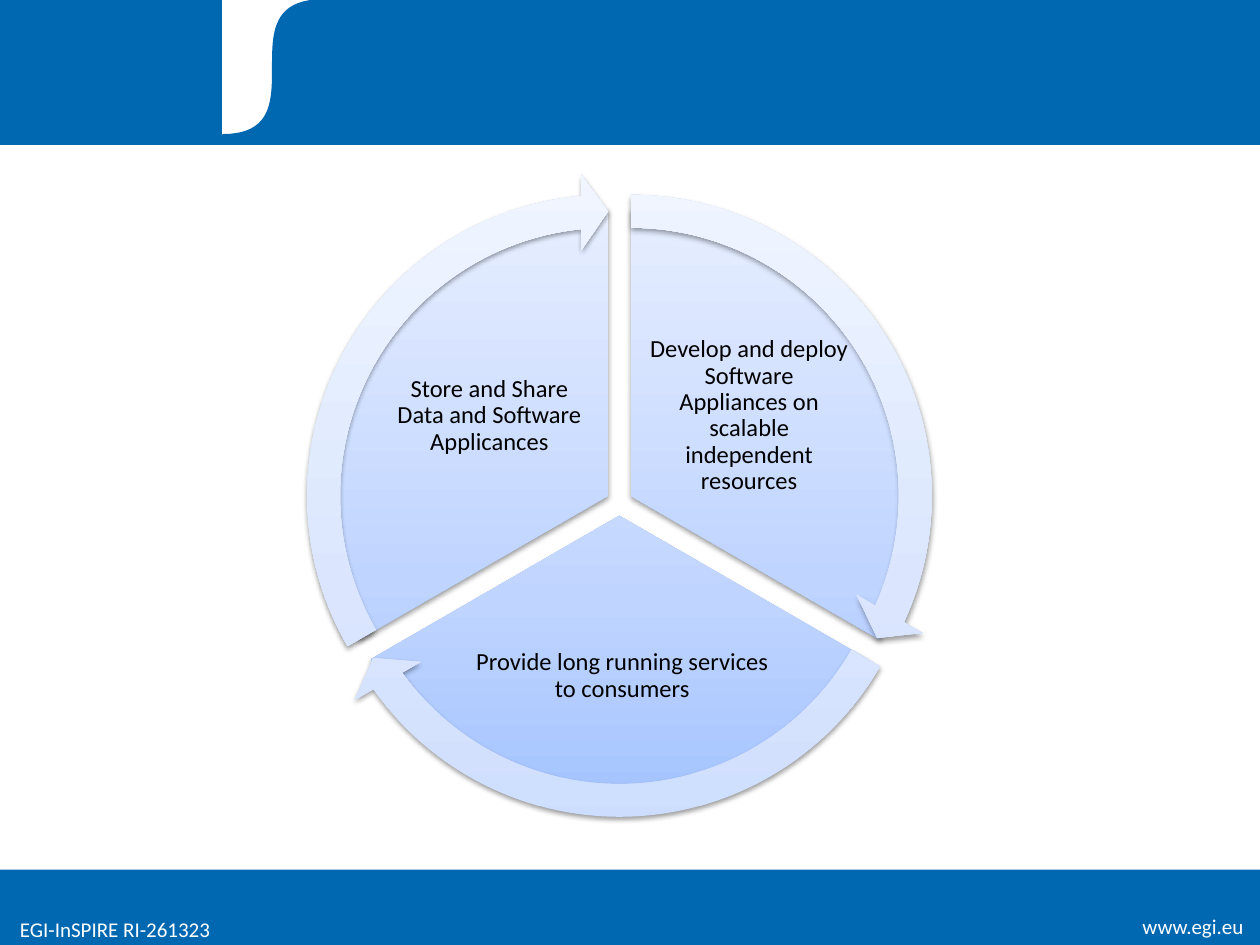
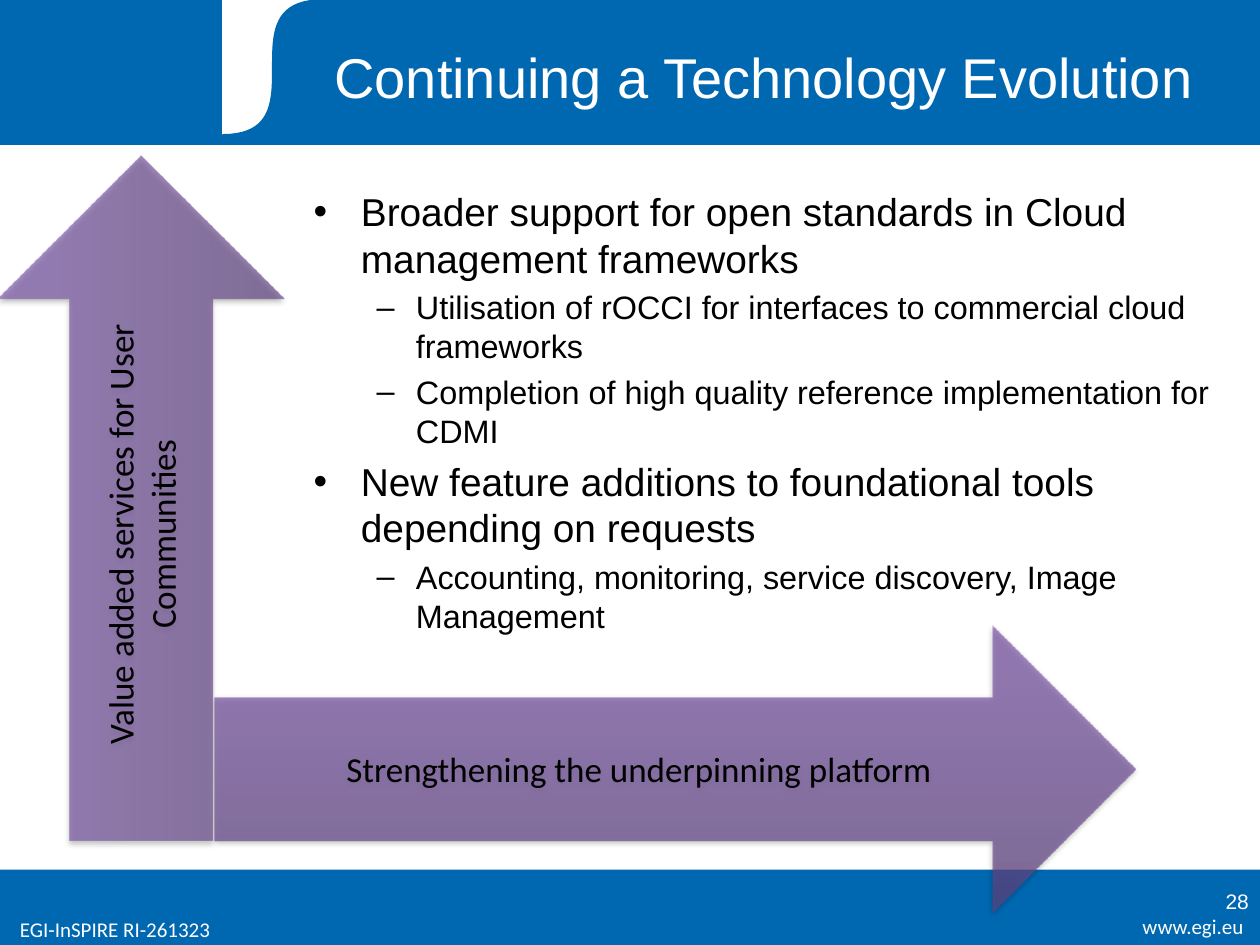
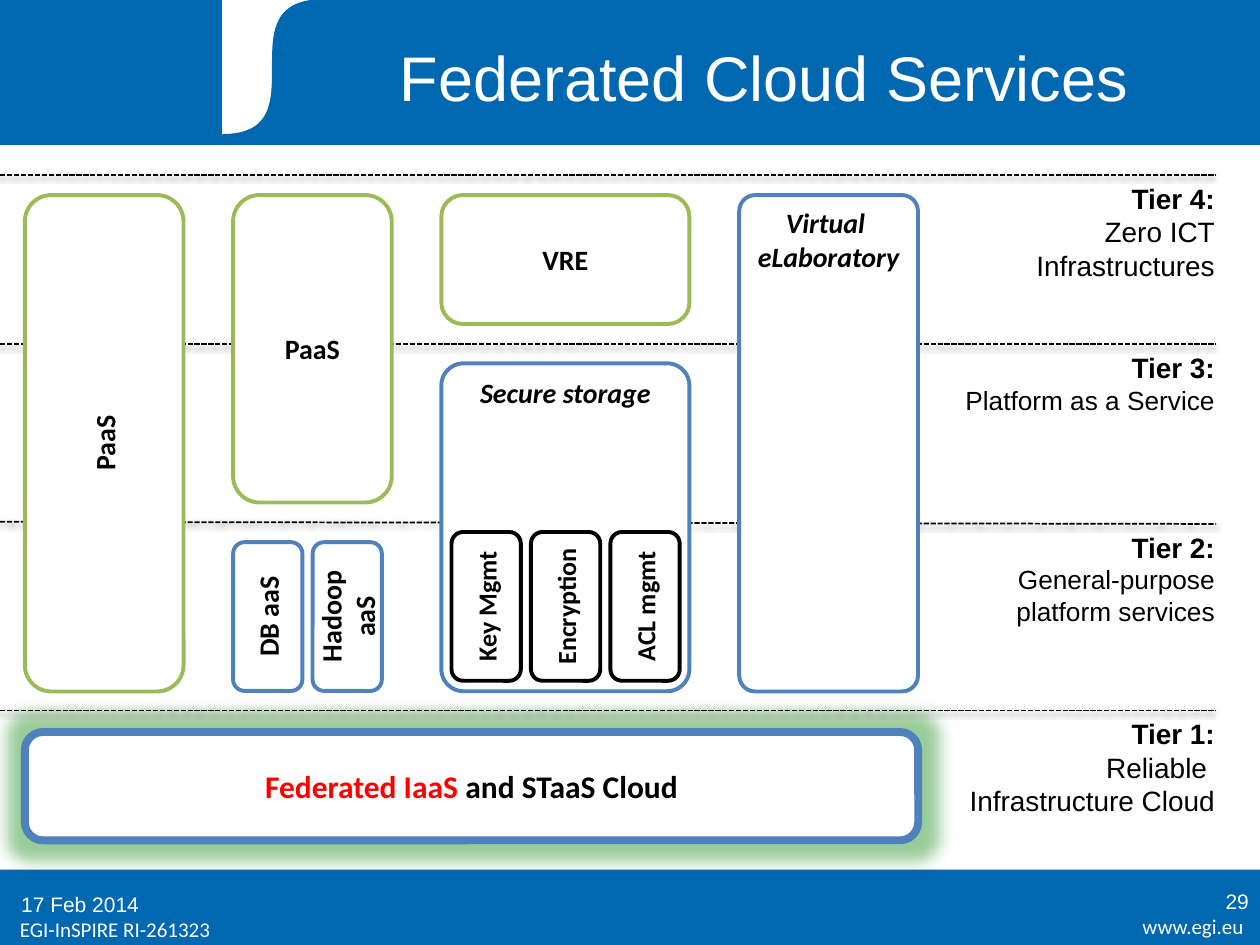
import pptx
import pptx.dml.color
import pptx.enum.dml
import pptx.enum.shapes
import pptx.enum.text
import pptx.oxml
import pptx.oxml.ns
import pptx.util

Pt = pptx.util.Pt
SHAPE = pptx.enum.shapes.MSO_SHAPE
ALIGN = pptx.enum.text.PP_ALIGN
ANCHOR = pptx.enum.text.MSO_ANCHOR
qn = pptx.oxml.ns.qn

# Shared look
BLUE, WHITE, BLACK = "0067B1", "FFFFFF", "000000"
GREEN_LINE, BLUE_LINE, RED, GLOW = "9BBB59", "4F81BD", "FF0000", "008000"
PIE_STOPS = [(0, "A4C4FF"), (35, "BFD4FF"), (100, "E6EEFF")]
RING_STOPS = [(0, "CDDDFE"), (35, "DBE6FE"), (100, "F0F5FF")]
PURPLE_STOPS = [(0, "5F4480"), (80, "7B58A6"), (100, "7C57A8")]


def rgb(value):
    return pptx.dml.color.RGBColor.from_string(value)


def parse(xml):
    return pptx.oxml.parse_xml(xml.replace(">", f" {pptx.oxml.ns.nsdecls('a')}>", 1))


def place(sp, x, y, w, h):
    sp.left, sp.top, sp.width, sp.height = Pt(x), Pt(y), Pt(w), Pt(h)


# Text
def style(p, size, color=BLACK, font="Calibri", bold=False, italic=False):
    f = p.font
    f.size, f.name, f.bold, f.italic = Pt(size), font, bold, italic
    f.color.rgb = rgb(color)


def write(sp, lines, size, align=ALIGN.CENTER, anchor=ANCHOR.MIDDLE, **look):
    tf = sp.text_frame
    tf.word_wrap = True
    tf.vertical_anchor = anchor
    for i, line in enumerate(lines):
        p = tf.add_paragraph() if i else tf.paragraphs[0]
        p.text = line
        p.alignment = align
        style(p, size, **look)
    return tf


def add_text(slide, box, lines, size, **look):
    sp = slide.shapes.add_textbox(*map(Pt, box))
    return write(sp, lines, size, **look)


def set_title(slide, text, size):
    sp = slide.shapes.title
    place(sp, 167.3, 9.2, 538.5, 68.5)
    write(sp, [text], size, color=WHITE, font="Arial")


def add_page_number(slide, number):
    add_text(slide, (552.7, 500.5, 168, 29), [number], 12,
             align=ALIGN.RIGHT, color=WHITE, font="Arial")


# Shapes
def add_shape(slide, kind, box, fill=WHITE, line=None, weight=0.75):
    sp = slide.shapes.add_shape(kind, *map(Pt, box))
    paint(sp, fill, line, weight)
    return sp


def paint(sp, fill, line=None, weight=0.75):
    sp.shadow.inherit = False
    sp.fill.solid()
    sp.fill.fore_color.rgb = rgb(fill)
    if line:
        sp.line.color.rgb = rgb(line)
        sp.line.width = Pt(weight)
    else:
        sp.line.fill.background()


def set_gradient(sp, stops, alpha=100):
    gs = "".join(f'<a:gs pos="{pos * 1000}"><a:srgbClr val="{color}">'
                 f'<a:alpha val="{alpha * 1000}"/></a:srgbClr></a:gs>'
                 for pos, color in stops)
    grad = parse(f'<a:gradFill rotWithShape="1"><a:gsLst>{gs}</a:gsLst>'
                 '<a:lin ang="16200000" scaled="0"/></a:gradFill>')
    spPr = sp.element.spPr
    spPr.replace(spPr.find(qn("a:solidFill")), grad)


def set_effect(sp, effect):
    spPr = sp.element.spPr
    for old in spPr.findall(qn("a:effectLst")):
        spPr.remove(old)
    spPr.append(parse(f"<a:effectLst>{effect}</a:effectLst>"))


def set_shadow(sp, alpha=38, dist=1.6):
    set_effect(sp, f'<a:outerShdw blurRad="{Pt(3.1)}" dist="{Pt(dist)}" dir="5400000" '
                   f'rotWithShape="0"><a:srgbClr val="{BLACK}">'
                   f'<a:alpha val="{alpha * 1000}"/></a:srgbClr></a:outerShdw>')


# Bands and footer, moved to the slide master
def bezier(p0, p1, p2, p3, steps=40):
    for i in range(1, steps + 1):
        t = i / steps
        u = 1 - t
        yield tuple(u**3 * a + 3 * u * u * t * b + 3 * u * t * t * c + t**3 * d
                    for a, b, c, d in zip(p0, p1, p2, p3))


def add_outline(slide, points, color):
    # Hundredths of a point keep the curve smooth
    fine = [(x * 100, y * 100) for x, y in points]
    fb = slide.shapes.build_freeform(*fine[0], scale=Pt(1) / Pt(0.01) * 1.27)
    fb.add_line_segments(fine[1:])
    paint(fb.convert_to_shape(), color, color)


def build_master(prs, slide):
    left, curve, right, bottom = 127.4, 184.3, 269.3, 77
    add_shape(slide, SHAPE.RECTANGLE, (0, 497, 720, 43), BLUE)
    add_shape(slide, SHAPE.RECTANGLE, (0, 0, 720, 82.3), BLUE, BLUE)
    # The white panel ends under the blue outline, so its right edge stays hidden
    add_shape(slide, SHAPE.RECTANGLE, (left, 0, right - left - 2, bottom), WHITE, WHITE)
    edge = bezier((left, bottom), (curve, bottom), (left, 0), (curve, 0))
    add_outline(slide, [(right, 0), (right, bottom), (left, bottom), *edge], BLUE)
    add_text(slide, (603.7, 518.5, 114, 22), ["www.egi.eu"], 12,
             align=ALIGN.RIGHT, color=WHITE)
    add_text(slide, (4.3, 520, 180, 22), ["EGI-InSPIRE RI-261323"], 12,
             align=ALIGN.LEFT, color=WHITE)
    tree = prs.slide_master.shapes.element
    for i, sp in enumerate(list(slide.shapes)):
        sp.element.nvSpPr.cNvPr.set("id", str(100 + i))
        tree.insert(2 + i, sp.element)


# Slide 1: cycle
def add_cycle(slide):
    # pie left and top, pie angles, arrow angles, label box, label
    steps = [
        (196.6, 119.5, (162, 18), (14.725, 161.994), (369.4, 188.6, 117.4, 98),
         "Develop and deploy Software Appliances on scalable independent resources"),
        (190.1, 131, (18, 90), (86.72, 18.005), (267.8, 343.4, 175.7, 85.7),
         "Provide long running services to consumers"),
        (183.6, 119.5, (90, 162), (158.73, 90), (221, 188.6, 117.4, 98),
         "Store and Share Data and Software Applicances"),
    ]
    for x, y, angles, _, box, label in steps:
        sp = add_shape(slide, SHAPE.PIE, (x, y, 327.6, 327.6))
        sp.adjustments[0], sp.adjustments[1] = angles
        set_gradient(sp, PIE_STOPS)
        set_shadow(sp)
        tf = add_text(slide, box, [label], 14)
        tf.margin_left = tf.margin_right = tf.margin_top = tf.margin_bottom = Pt(1.4)
        tf.paragraphs[0].line_spacing = 0.9
    for x, y, _, (end, start), _, _ in steps:
        sp = add_shape(slide, SHAPE.CIRCULAR_ARROW, (x - 20.4, y - 20.5, 368.6, 368.6))
        for i, value in enumerate((0.051, 3.275, end, start, 0.059)):
            sp.adjustments[i] = value
        set_gradient(sp, RING_STOPS)
        set_shadow(sp)


# Slide 2: arrows and list
def add_purple_arrow(slide, box, text, alpha, rotation=0):
    sp = add_shape(slide, SHAPE.RIGHT_ARROW, box)
    sp.rotation = rotation
    set_gradient(sp, PURPLE_STOPS, alpha)
    set_shadow(sp, 35, 1.8)
    write(sp, [text], 20)


def fill_list(slide, items):
    sp = slide.placeholders[1]
    place(sp, 172, 103.7, 537, 255)
    tf = write(sp, [text for _, text in items], 22.2, align=ALIGN.LEFT,
               anchor=ANCHOR.TOP, font="Arial")
    tf.auto_size = pptx.enum.text.MSO_AUTO_SIZE.NONE
    for p, (level, _) in zip(tf.paragraphs, items):
        p.level = level
        p.font.size = Pt(18.5 if level else 22.2)
    tf.paragraphs[0].space_before = Pt(0)


# Slide 3: tiers and boxes
def add_tier(slide, y, y_end, lines, size):
    c = slide.shapes.add_connector(pptx.enum.shapes.MSO_CONNECTOR.STRAIGHT,
                                   Pt(0), Pt(y), Pt(695), Pt(y_end))
    c.line.color.rgb = rgb(BLACK)
    c.line.width = Pt(1)
    c.line.dash_style = pptx.enum.dml.MSO_LINE.SQUARE_DOT
    set_shadow(c)
    tf = add_text(slide, (541.3, y_end, 160, 66), lines, size, align=ALIGN.RIGHT,
                  anchor=ANCHOR.TOP, font="Arial")
    style(tf.paragraphs[0], 16, font="Arial", bold=True)


def add_box(slide, box, lines, line, weight=2.25, size=16, radius=None, **look):
    sp = add_shape(slide, SHAPE.ROUNDED_RECTANGLE, box, WHITE, line, weight)
    if radius:
        sp.adjustments[0] = radius
    write(sp, lines, size, bold=True, **look)
    return sp


def add_upright_box(slide, x, y, lines, line, size=16):
    w, h = 39.6, 85
    box = (x + (w - h) / 2, y + (h - w) / 2, h, w)
    add_box(slide, box, lines, line, size=size).rotation = 270


def add_services(slide):
    top, tall, step = 111.5, 283.7, 45.4
    cloud = add_box(slide, (14.2, 418.3, 510.5, 61.9), ["Federated IaaS "], BLUE_LINE,
                    weight=4.5, size=18)
    set_effect(cloud, f'<a:glow rad="{Pt(18)}"><a:srgbClr val="{GLOW}">'
                      '<a:alpha val="40000"/></a:srgbClr></a:glow>')
    p = cloud.text_frame.paragraphs[0]
    p.runs[0].font.color.rgb = rgb(RED)
    p.add_run().text = "and STaaS Cloud"

    add_tier(slide, 406, 406, ["Tier 1:", "Reliable ", "Infrastructure Cloud"], 16)
    add_tier(slide, 100, 100, ["Tier 4:", "Zero ICT", "Infrastructures"], 16)
    add_tier(slide, 196.7, 196.7, ["Tier 3:", "Platform as a Service"], 15)
    add_tier(slide, 298.2, 299.4, ["Tier 2:", "General-purpose platform services"], 15)

    add_box(slide, (133.2, top, 90.7, 175.7), ["PaaS"], GREEN_LINE)
    sp = add_box(slide, (14.2, top, 90.7, tall), ["PaaS"], GREEN_LINE)
    sp.element.txBody.bodyPr.set("vert", "vert270")
    for i, lines in enumerate((["DB aaS"], ["Hadoop", "aaS"])):
        add_upright_box(slide, 133.2 + i * step, 309.8, lines, BLUE_LINE)

    add_box(slide, (252.2, top, 141.8, 73.7), ["VRE"], GREEN_LINE)
    add_box(slide, (252.2, 207.6, 141.8, 187.4), ["Secure storage"], BLUE_LINE,
            radius=0.09, anchor=ANCHOR.TOP, italic=True)
    for i, label in enumerate(("Key Mgmt", "Encryption", "ACL mgmt")):
        add_upright_box(slide, 258 + i * step, 304, [label], BLACK, 14.9)
    add_box(slide, (422.4, top, 102.2, tall), ["Virtual ", "eLaboratory"], BLUE_LINE,
            radius=0.09, anchor=ANCHOR.TOP, italic=True)


def main():
    prs = pptx.Presentation()
    prs.slide_width, prs.slide_height = Pt(720), Pt(540)
    content, title_only, blank = (prs.slide_layouts[i] for i in (1, 5, 6))

    # Cycle
    slide = prs.slides.add_slide(blank)
    build_master(prs, slide)
    add_cycle(slide)

    # Technology evolution
    slide = prs.slides.add_slide(content)
    set_title(slide, "Continuing a Technology Evolution", 32)
    fill_list(slide, [
        (0, "Broader support for open standards in Cloud management frameworks"),
        (1, "Utilisation of rOCCI for interfaces to commercial cloud frameworks"),
        (1, "Completion of high quality reference implementation for CDMI"),
        (0, "New feature additions to foundational tools depending on requests"),
        (1, "Accounting, monitoring, service discovery, Image Management"),
    ])
    add_purple_arrow(slide, (122.7, 357.3, 526, 164),
                     "Strengthening the underpinning platform", 70)
    add_page_number(slide, "28")
    add_purple_arrow(slide, (-115.2, 202.7, 391.3, 164),
                     "Value added services for User Communities", 67, 270)

    # Federated cloud services
    slide = prs.slides.add_slide(title_only)
    set_title(slide, "Federated Cloud Services", 36)
    add_page_number(slide, "29")
    add_services(slide)
    add_text(slide, (5, 502, 168, 29), ["17 Feb 2014"], 12,
             align=ALIGN.LEFT, color=WHITE, font="Arial")

    prs.save("out.pptx")


if __name__ == "__main__":
    main()
